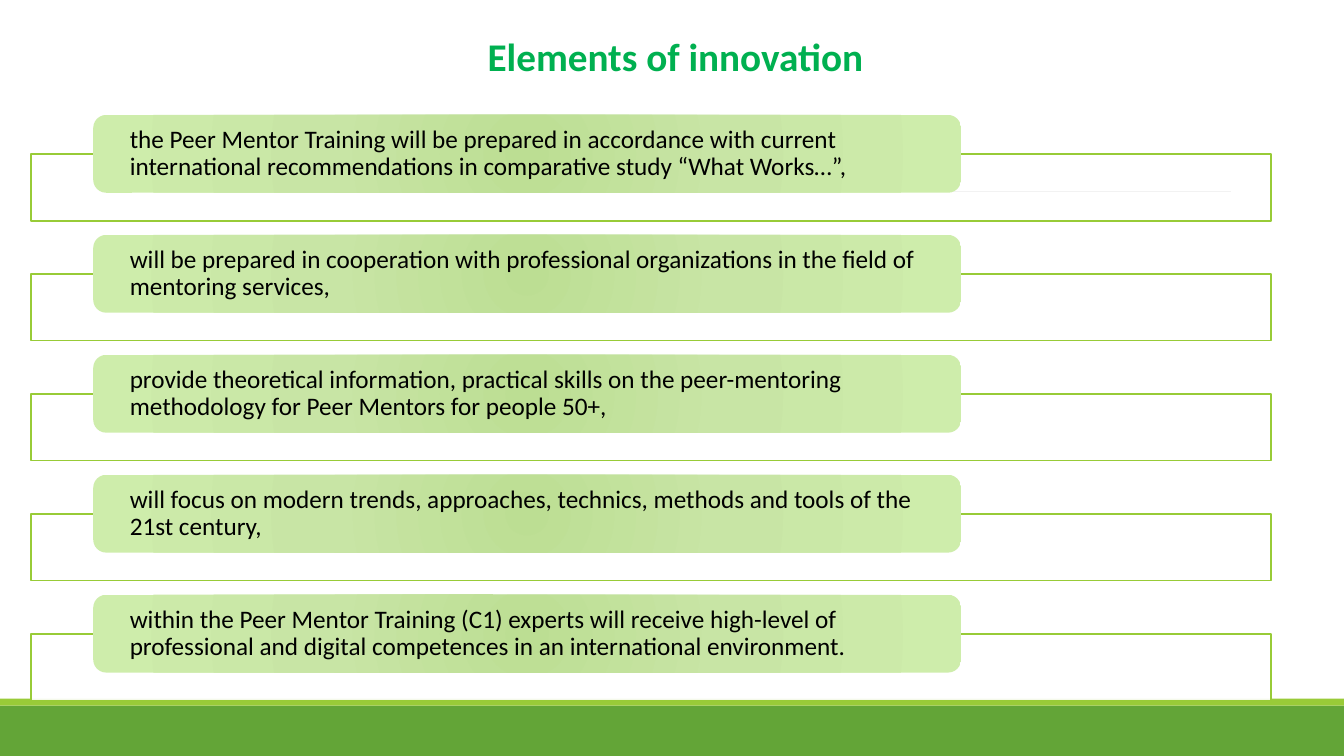
from lxml import etree
from pptx import Presentation
from pptx.dml.color import RGBColor
from pptx.enum.shapes import MSO_CONNECTOR, MSO_SHAPE
from pptx.enum.text import MSO_ANCHOR, PP_ALIGN
from pptx.oxml import parse_xml
from pptx.oxml.ns import nsdecls, qn
from pptx.util import Pt

RECT = MSO_SHAPE.RECTANGLE
ROUND = MSO_SHAPE.ROUNDED_RECTANGLE
LINE = MSO_CONNECTOR.STRAIGHT
LEFT, CENTER = PP_ALIGN.LEFT, PP_ALIGN.CENTER
MIDDLE, BOTTOM = MSO_ANCHOR.MIDDLE, MSO_ANCHOR.BOTTOM

FONT = "Calibri"
COLORS = {
    "band": "63A537",
    "strip": "99CB38",
    "rule": "7F7F7F",
    "title": "00B050",
    "frame": "98CB37",
    "white": "FFFFFF",
    "text": "000000",
}
GLOW = [(0, "BCDE93"), (45, "C8E5A5"), (100, "CEEDAB")]
ITEMS = [
    "the Peer Mentor Training will be prepared in accordance with current "
    "international recommendations in comparative study “What Works…”,",
    "will be prepared in cooperation with professional organizations in the "
    "field of mentoring services,",
    "provide theoretical information, practical skills on the peer-mentoring "
    "methodology for Peer Mentors for people 50+,",
    "will focus on modern trends, approaches, technics, methods and tools of "
    "the 21st century,",
    "within the Peer Mentor Training (C1) experts will receive high-level of "
    "professional and digital competences in an international environment.",
]


def color(name):
    return RGBColor.from_string(COLORS[name])


def add_box(slide, kind, box, fill):
    shape = slide.shapes.add_shape(kind, *map(Pt, box))
    shape.shadow.inherit = False
    shape.fill.solid()
    shape.fill.fore_color.rgb = color(fill)
    shape.line.fill.background()
    return shape


def set_text(shape, text, size, tint, align, anchor, insets, space, bold=False):
    frame = shape.text_frame
    frame.word_wrap = True
    frame.vertical_anchor = anchor
    frame.margin_left = frame.margin_right = Pt(insets[0])
    frame.margin_top = frame.margin_bottom = Pt(insets[1])
    para = frame.paragraphs[0]
    para.text = text
    para.alignment = align
    para.line_spacing = space
    para.font.name = FONT
    para.font.size = Pt(size)
    para.font.bold = bold
    para.font.color.rgb = color(tint)


def set_glow(shape):
    stops = "".join(
        f'<a:gs pos="{pos * 1000}"><a:srgbClr val="{tint}"/></a:gs>'
        for pos, tint in GLOW
    )
    grad = parse_xml(
        f'<a:gradFill {nsdecls("a")} rotWithShape="1"><a:gsLst>{stops}</a:gsLst>'
        '<a:path path="circle"><a:fillToRect l="50000" t="50000" r="50000" '
        'b="50000"/></a:path></a:gradFill>'
    )
    props = shape.element.spPr
    props.replace(props.find(qn("a:solidFill")), grad)


def add_base(slide, left, top, width, height):
    strip = 5
    add_box(slide, RECT, (left, top + strip, width, height - strip), "band")
    add_box(slide, RECT, (left, top, width, strip), "strip")


def add_rule(slide, left, top, width):
    rule = slide.shapes.add_connector(
        LINE, Pt(left), Pt(top), Pt(left + width), Pt(top)
    )
    rule.line.color.rgb = color("rule")
    rule.line.width = Pt(0.75)
    etree.SubElement(rule.element.spPr, qn("a:effectLst"))


def add_title(slide, left, top, width, height):
    title = slide.shapes.add_textbox(*map(Pt, (left, top, width, height)))
    set_text(title, "Elements of innovation", 28, "title", CENTER, BOTTOM,
             (7.2, 3.6), 0.85, True)


def add_item(slide, left, top, width, height, text):
    drop = 28
    frame = add_box(
        slide, RECT, (left, top + drop, width, height - drop), "white"
    )
    tint = frame.element.spPr.find(qn("a:solidFill"))[0]
    etree.SubElement(tint, qn("a:alpha"), val="90000")
    frame.line.color.rgb = color("frame")
    frame.line.width = Pt(1)

    pill = add_box(
        slide, ROUND, (left + width * 0.05, top, width * 0.7, 55.6), "white"
    )
    pill.adjustments[0] = 0.167
    set_glow(pill)
    set_text(pill, text, 18, "text", LEFT, MIDDLE, (23.4, 0), 0.9)


def add_list(slide, left, top, width, height):
    gap = 10
    step = (height + gap) / len(ITEMS)
    for i, text in enumerate(ITEMS):
        add_item(slide, left, top + i * step, width, step - gap, text)


def main():
    deck = Presentation()
    deck.slide_width, deck.slide_height = Pt(960), Pt(540)
    slide = deck.slides.add_slide(deck.slide_layouts[6])
    add_base(slide, 0, 499, 960, 41)
    add_rule(slide, 94.3, 136.8, 784.8)
    add_title(slide, 86.4, 22.3, 792, 38.2)
    add_list(slide, 22.3, 82.1, 885.6, 418.4)
    deck.save("out.pptx")


if __name__ == "__main__":
    main()
